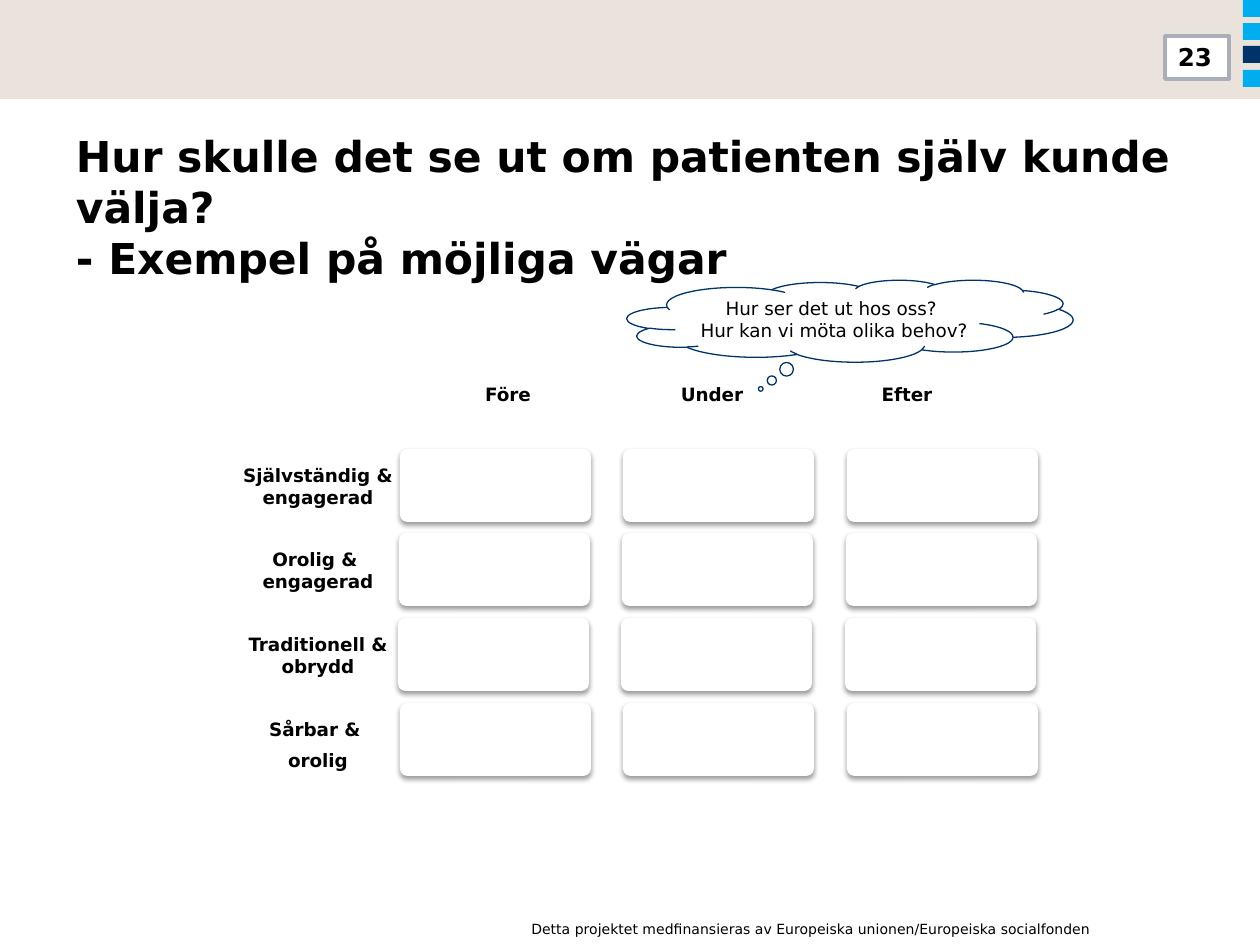
from lxml.etree import SubElement
from pptx import Presentation
from pptx.dml.color import RGBColor
from pptx.enum.shapes import MSO_SHAPE
from pptx.enum.text import MSO_ANCHOR, PP_ALIGN
from pptx.oxml.ns import qn
from pptx.util import Pt

PX = 914400 // 126
FONT = "DejaVu Sans"
BLACK = RGBColor(0x00, 0x00, 0x00)
WHITE = RGBColor(0xFF, 0xFF, 0xFF)
SAND = RGBColor(0xE9, 0xE3, 0xDC)
CYAN = RGBColor(0x00, 0xAE, 0xEF)
NAVY = RGBColor(0x00, 0x34, 0x68)
GREY = RGBColor(0xAA, 0xAE, 0xB9)

PHASES = [("Före", 454, 108), ("Under", 645, 134), ("Efter", 840, 134)]
# Each patient type: label paragraphs and left edge of its first card
PATIENT_TYPES = [
    (["Självständig & engagerad"], 400),
    (["Orolig & \vengagerad"], 399),
    (["Traditionell & obrydd"], 398),
    (["Sårbar & ", "orolig"], 400),
]


def scaled(*lengths):
    return [length * PX for length in lengths]


def write_text(shape, paragraphs, size=10.5, bold=False, align=PP_ALIGN.CENTER,
               anchor=MSO_ANCHOR.TOP, inset_x=5, inset_y=5):
    """Fill a shape with paragraphs; a vertical tab is a line break."""
    frame = shape.text_frame
    frame.word_wrap = True
    frame.vertical_anchor = anchor
    frame.margin_left = frame.margin_right = inset_x * PX
    frame.margin_top = frame.margin_bottom = inset_y * PX
    for index, text in enumerate(paragraphs):
        paragraph = frame.add_paragraph() if index else frame.paragraphs[0]
        paragraph.text = text
        paragraph.alignment = align
        if index:
            paragraph.space_before = Pt(5)
        font = paragraph.font
        font.name, font.size, font.bold = FONT, Pt(size), bold
        font.color.rgb = BLACK


def add_text(slide, box, paragraphs, **text_format):
    write_text(slide.shapes.add_textbox(*scaled(*box)), paragraphs, **text_format)


def add_box(slide, kind, box, fill, line=None, line_width=0.75):
    shape = slide.shapes.add_shape(kind, *scaled(*box))
    shape.shadow.inherit = False
    shape.fill.solid()
    shape.fill.fore_color.rgb = fill
    if line is None:
        shape.line.fill.background()
    else:
        shape.line.color.rgb = line
        shape.line.width = Pt(line_width)
    return shape


def add_card(slide, left, top):
    card = add_box(slide, MSO_SHAPE.ROUNDED_RECTANGLE, (left, top, 191, 73), WHITE)
    card.adjustments[0] = 0.1
    effects = card._element.spPr.find(qn("a:effectLst"))
    shadow = SubElement(effects, qn("a:outerShdw"), blurRad=str(Pt(3.1)),
                        dist=str(Pt(1.6)), dir="5400000", rotWithShape="0")
    color = SubElement(shadow, qn("a:srgbClr"), val=str(BLACK))
    SubElement(color, qn("a:alpha"), val="38000")


def add_frame(slide):
    """Header band, side squares, page number and footer."""
    add_box(slide, MSO_SHAPE.RECTANGLE, (0, 0, 1260, 99), SAND)
    for index, color in enumerate([CYAN, CYAN, NAVY, CYAN]):
        add_box(slide, MSO_SHAPE.RECTANGLE, (1243, index * 70 // 3, 17, 17), color)
    number = add_box(slide, MSO_SHAPE.RECTANGLE, (1165, 36, 64, 43), WHITE, GREY, 2)
    write_text(number, ["23"], size=14, bold=True, align=PP_ALIGN.LEFT,
               inset_x=13, inset_y=6)
    add_text(slide, (505, 915, 599, 30),
             ["Detta projektet medfinansieras av Europeiska unionen/Europeiska socialfonden"],
             size=8, align=PP_ALIGN.RIGHT, inset_x=13, inset_y=6)


def add_thought_cloud(slide):
    cloud = add_box(slide, MSO_SHAPE.CLOUD_CALLOUT, (627, 280, 446, 82), WHITE, NAVY)
    cloud.adjustments[0] = -0.2
    cloud.adjustments[1] = 0.829
    write_text(cloud, ["Hur ser det ut hos oss? \vHur kan vi möta olika behov?"],
               anchor=MSO_ANCHOR.MIDDLE, inset_x=9)


def add_matrix(slide):
    for name, left, width in PHASES:
        add_text(slide, (left, 378, width, 43), [name], bold=True)
    for row, (label, left) in enumerate(PATIENT_TYPES):
        top = 449 + row * 254 // 3
        for column in range(len(PHASES)):
            add_card(slide, left + column * 447 // 2, top)
        add_text(slide, (226, top + 10, 184, 65), label, bold=True)


def main():
    presentation = Presentation()
    presentation.slide_width, presentation.slide_height = scaled(1260, 945)
    slide = presentation.slides.add_slide(presentation.slide_layouts[6])
    add_frame(slide)
    add_text(slide, (63, 124, 1134, 158),
             ["Hur skulle det se ut om patienten själv kunde välja?\v- Exempel på möjliga vägar"],
             size=24.3, bold=True, align=PP_ALIGN.LEFT, inset_x=13, inset_y=6)
    add_matrix(slide)
    add_thought_cloud(slide)
    presentation.save("out.pptx")


if __name__ == "__main__":
    main()
